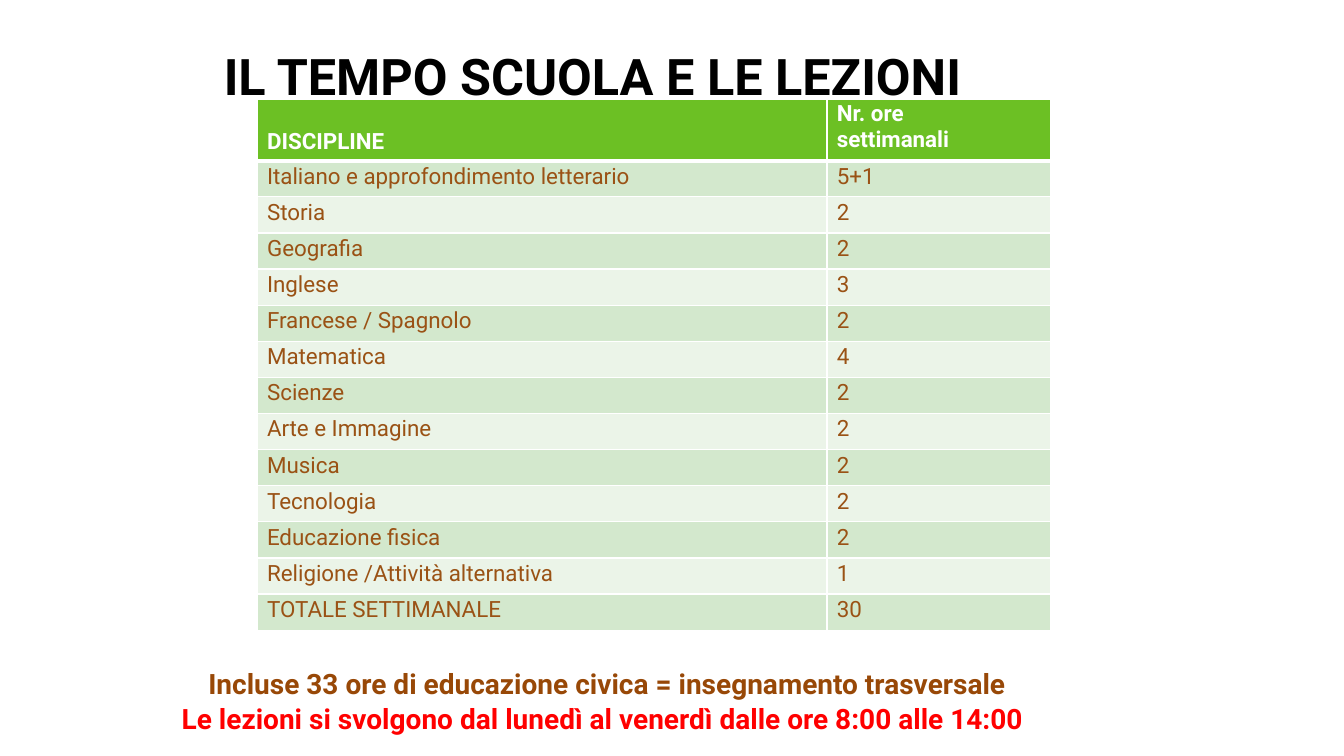
from lxml.etree import SubElement
from pptx import Presentation
from pptx.dml.color import RGBColor
from pptx.oxml.ns import qn
from pptx.util import Cm, Pt

FONT = "Roboto"
WHITE, GREEN, BROWN = "FFFFFF", "6CC024", "9A5215"
BANDS = ("D3E8CD", "EBF4E8")
HEADER = ("DISCIPLINE", "Nr. ore\vsettimanali")
SUBJECTS = [
    ("Italiano e approfondimento letterario", "5+1"),
    ("Storia", "2"),
    ("Geografia", "2"),
    ("Inglese", "3"),
    ("Francese / Spagnolo", "2"),
    ("Matematica", "4"),
    ("Scienze", "2"),
    ("Arte e Immagine", "2"),
    ("Musica", "2"),
    ("Tecnologia", "2"),
    ("Educazione fisica", "2"),
    ("Religione /Attività alternativa", "1"),
    ("TOTALE SETTIMANALE", "30"),
]


def color(value):
    return RGBColor.from_string(value)


def format_runs(p, size, value, bold):
    for r in p.runs:
        r.font.name = FONT
        r.font.size = Pt(size)
        r.font.bold = bold
        r.font.color.rgb = color(value)


def add_text(slide, left, top, width, height, lines, size):
    """Add bold lines, each given as (text, colour, left indent in cm)."""
    tf = slide.shapes.add_textbox(Cm(left), Cm(top), Cm(width), Cm(height)).text_frame
    tf.word_wrap = True
    tf.margin_left = tf.margin_right = tf.margin_bottom = 0
    tf.margin_top = Cm(0.03)
    tf.text = "\n".join(text for text, _, _ in lines)
    for i, (p, (_, value, indent)) in enumerate(zip(tf.paragraphs, lines)):
        p._p.get_or_add_pPr().set("marL", str(Cm(indent)))
        if i:
            p.space_before = Pt(1)
        format_runs(p, size, value, True)


def set_borders(cell, top, bottom):
    """Draw white cell borders; top and bottom are widths in points."""
    tcPr = cell._tc.get_or_add_tcPr()
    for side, width in (("L", 1), ("R", 1), ("T", top), ("B", bottom)):
        ln = SubElement(tcPr, qn(f"a:ln{side}"), w=str(Pt(width)))
        fill = SubElement(ln, qn("a:solidFill"))
        SubElement(fill, qn("a:srgbClr"), val=WHITE)


def fill_cell(cell, text, row, margin_top):
    is_header = row == 0
    cell.margin_left = Cm(0.25)
    cell.margin_right = cell.margin_bottom = 0
    cell.margin_top = Cm(margin_top)
    set_borders(cell, 3 if row == 1 else 1, 3 if is_header else 1)
    cell.fill.solid()
    cell.fill.fore_color.rgb = color(GREEN if is_header else BANDS[(row - 1) % 2])
    cell.text_frame.text = text
    format_runs(cell.text_frame.paragraphs[0], 16, WHITE if is_header else BROWN, is_header)


def add_timetable(slide):
    rows = [HEADER, *SUBJECTS]
    table = slide.shapes.add_table(
        len(rows), 2, Cm(6.48), Cm(2.5), Cm(20), Cm(13.38)).table
    for column, width in zip(table.columns, (14.36, 5.64)):
        column.width = Cm(width)
    for i, texts in enumerate(rows):
        table.rows[i].height = Cm(0.91 if i else 1.55)
        margins = (0.07, 0.07) if i else (0.74, 0.03)
        for j, text in enumerate(texts):
            fill_cell(table.cell(i, j), text, i, margins[j])


def main():
    prs = Presentation()
    prs.slide_width, prs.slide_height = Cm(33.87), Cm(19.05)
    s = prs.slides.add_slide(prs.slide_layouts[6])
    add_text(s, 5.61, 1.12, 22.12, 1.6,
             [("IL TEMPO SCUOLA E LE LEZIONI", "000000", 0.03)], 36)
    add_timetable(s)
    add_text(s, 4.55, 16.76, 24.28, 1.78, [
        ("Incluse 33 ore di educazione civica = insegnamento trasversale", "984807", 0.7),
        ("Le lezioni si svolgono dal lunedì al venerdì dalle ore 8:00 alle 14:00", "FF0000", 0.03),
    ], 20)
    prs.save("out.pptx")


if __name__ == "__main__":
    main()
